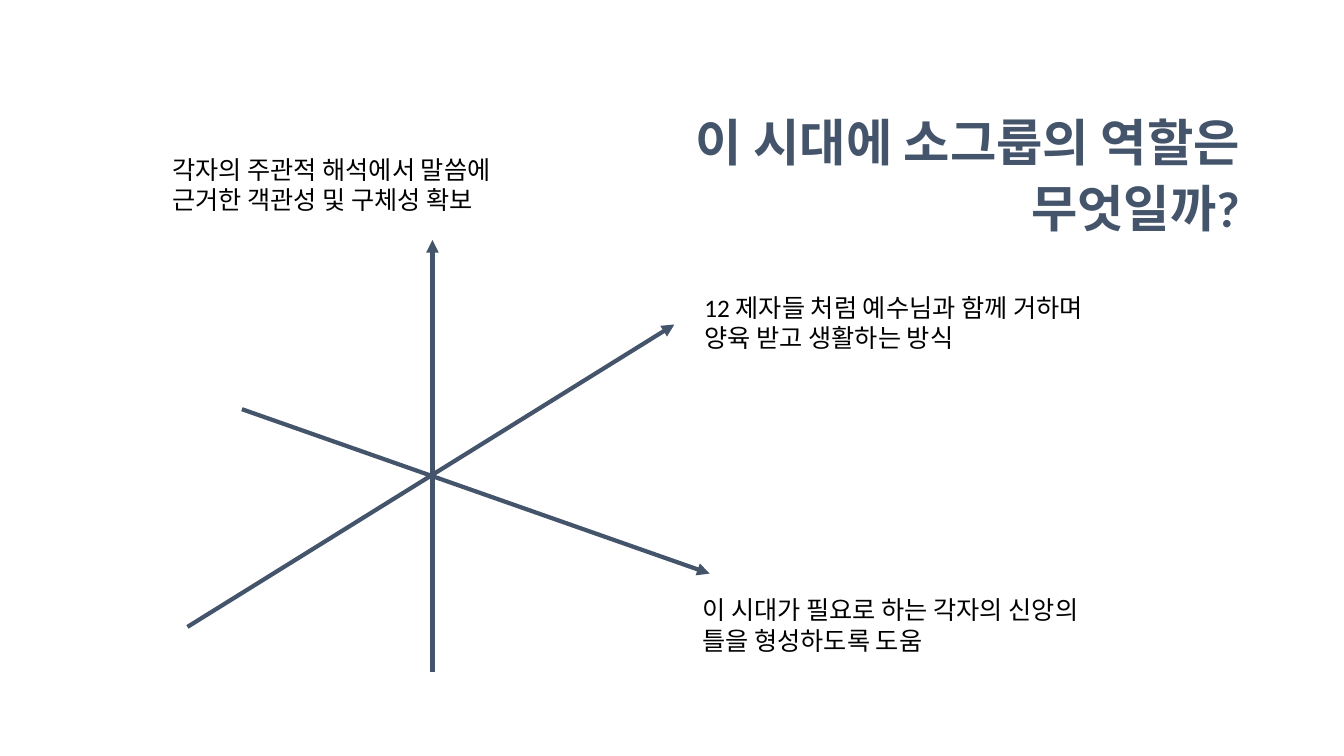
from lxml import etree
from pptx import Presentation
from pptx import util as u
from pptx.dml.color import RGBColor
from pptx.enum import shapes, text
from pptx.oxml import ns


def colour(value):
    return RGBColor.from_string(value)


class AxisSlide:
    FONT = "Calibri"
    SLATE = "44546A"
    BLACK = "000000"

    def __init__(self, deck):
        self.slide = deck.slides.add_slide(deck.slide_layouts[5])

    def add_wording(self, paragraph, wording, size, ink, bold=False):
        run = paragraph.add_run()
        run.text = wording
        run.font.name = self.FONT
        run.font.size = u.Pt(size)
        run.font.bold = bold
        run.font.color.rgb = colour(ink)

    def title(self, wording, left, top, width, height):
        heading = self.slide.shapes.title
        heading.left, heading.top = u.Pt(left), u.Pt(top)
        heading.width, heading.height = u.Pt(width), u.Pt(height)
        frame = heading.text_frame
        frame.word_wrap = True
        frame.auto_size = text.MSO_AUTO_SIZE.NONE
        frame.vertical_anchor = text.MSO_ANCHOR.MIDDLE
        paragraph = frame.paragraphs[0]
        paragraph.alignment = text.PP_ALIGN.RIGHT
        paragraph.line_spacing = 1.1
        self.add_wording(paragraph, wording, 36, self.SLATE, bold=True)

    def label(self, wording, left, top, width, height):
        box = self.slide.shapes.add_textbox(
            u.Pt(left), u.Pt(top), u.Pt(width), u.Pt(height))
        frame = box.text_frame
        frame.word_wrap = True
        frame.auto_size = text.MSO_AUTO_SIZE.SHAPE_TO_FIT_TEXT
        self.add_wording(frame.paragraphs[0], wording, 18, self.BLACK)

    def arrow(self, start, end):
        axis = self.slide.shapes.add_connector(
            shapes.MSO_CONNECTOR.STRAIGHT, *(u.Pt(v) for v in start + end))
        axis.line.color.rgb = colour(self.SLATE)
        axis.line.width = u.Pt(3)
        properties = axis._element.spPr
        line = properties.find(ns.qn("a:ln"))
        etree.SubElement(line, ns.qn("a:tailEnd"), type="triangle")
        etree.SubElement(properties, ns.qn("a:effectLst"))


def main():
    deck = Presentation()
    deck.slide_width, deck.slide_height = u.Pt(960), u.Pt(540)
    page = AxisSlide(deck)

    # Question
    page.title("이 시대에 소그룹의 역할은 무엇일까?", 419.8, 71.3, 473, 102.2)

    # Three axes, each with the role it points to
    roles = [
        ((133.9, 447.8), (481.7, 231.8),
         "12 제자들 처럼 예수님과 함께 거하며 양육 받고 생활하는 방식",
         (496.1, 205.2, 308.2, 51.1)),
        ((308.9, 480.2), (308.9, 171.4),
         "각자의 주관적 해석에서 말씀에 근거한 객관성 및 구체성 확보",
         (115.9, 106.6, 256.3, 72.7)),
        ((172.8, 292.3), (506.9, 409.7),
         "이 시대가 필요로 하는 각자의 신앙의 틀을 형성하도록 도움",
         (494.6, 421.2, 290.2, 51.1)),
    ]
    for start, end, role, place in roles:
        page.arrow(start, end)
        page.label(role, *place)

    deck.save("out.pptx")


if __name__ == "__main__":
    main()
